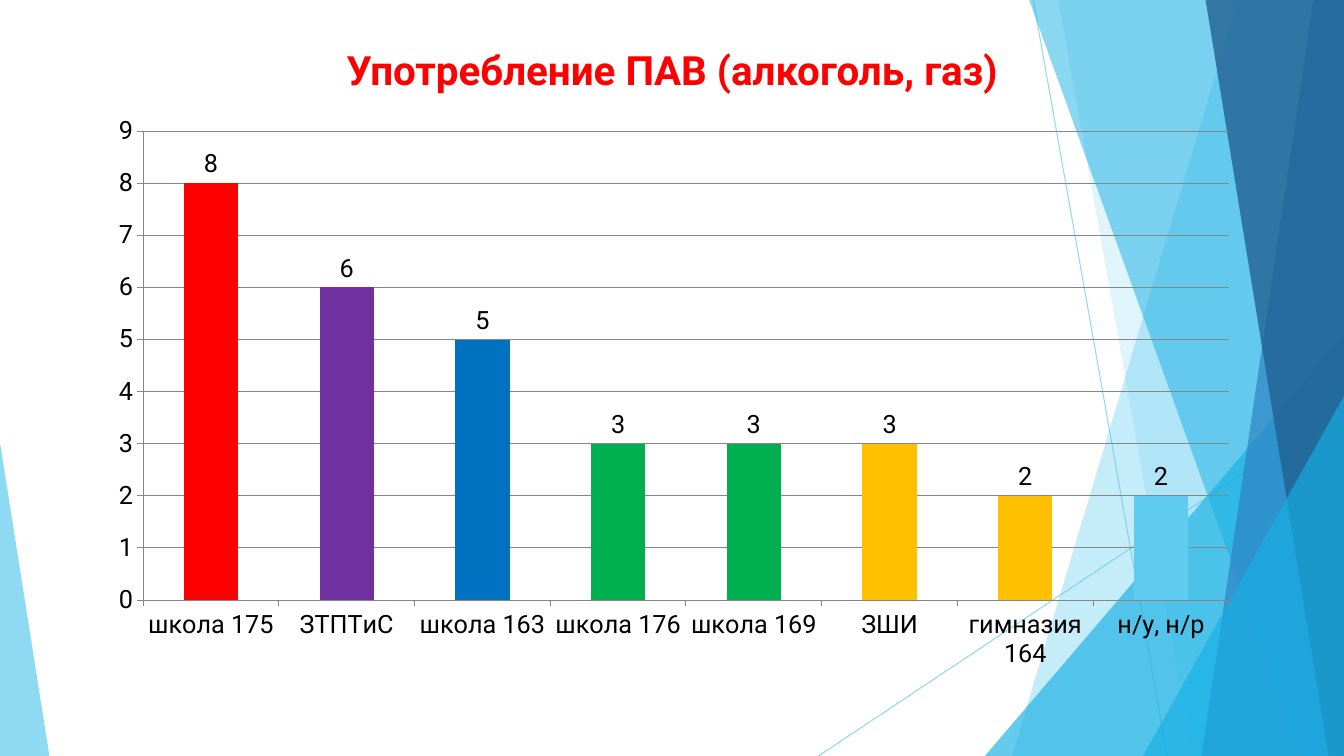
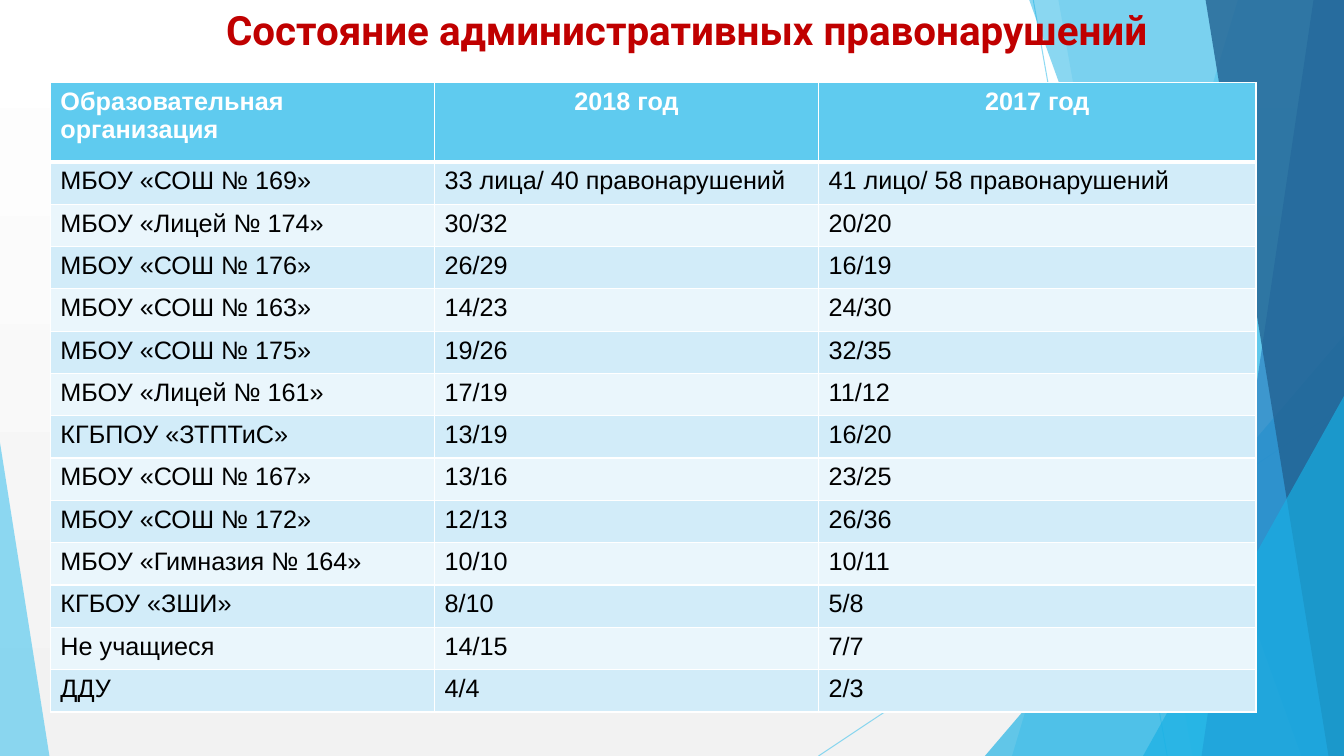
import pptx
import pptx.chart.data
import pptx.dml.color
import pptx.enum.chart
import pptx.enum.shapes
import pptx.enum.text
import pptx.oxml
import pptx.oxml.ns
import pptx.util
import lxml.etree

Pt = pptx.util.Pt
qn = pptx.oxml.ns.qn
ALIGN = pptx.enum.text.PP_ALIGN
W, H = pptx.util.Inches(13.33), pptx.util.Inches(7.5)

COLORS = {
    "white": "FFFFFF", "black": "000000", "mist": "F2F2F2", "grid": "868686",
    "sky": "5FCBEF", "cyan": "17B0E4", "blue": "2E83C3", "navy": "226292",
    "band_dark": "D2ECF9", "band_light": "EAF6FC",
    "red": "FF0000", "dark_red": "C00000", "purple": "7030A0",
    "azure": "0070C0", "green": "00B050", "amber": "FFC000",
}

# Backdrop geometry, in percent of the slide
RAYS = [((76.88, 0), (86.85, 100)), ((100, 53.73), (60.9, 100))]
# Panels reach the right edge: top x, bottom x, colour, opacity
# Triangles stand on the bottom edge: left, top, right, apex, colour, opacity
FACETS = [
    ("panel", 92.1, 75.3, "sky", 36),
    ("panel", 78.75, 88.73, "sky", 20),
    ("triangle", 73.28, 44.4, 100, 1, "cyan", 66),
    ("panel", 76.58, 96.83, "cyan", 50),
    ("panel", 97.73, 89.4, "blue", 70),
    ("panel", 89.7, 98.85, "navy", 80),
    ("triangle", 85.05, 52.4, 100, 1, "cyan", 66),
    ("triangle", 0, 58.53, 3.68, 0, "sky", 70),
]

BARS = [
    ("школа 175", 8, "red"), ("ЗТПТиС", 6, "purple"), ("школа 163", 5, "azure"),
    ("школа 176", 3, "green"), ("школа 169", 3, "green"), ("ЗШИ", 3, "amber"),
    ("гимназия 164", 2, "amber"), ("н/у, н/р", 2, "sky"),
]

OFFENCES = [
    ("Образовательная организация", "2018 год", "2017 год"),
    ("МБОУ «СОШ № 169»", "33 лица/ 40 правонарушений", "41 лицо/ 58 правонарушений"),
    ("МБОУ «Лицей № 174»", "30/32", "20/20"),
    ("МБОУ «СОШ № 176»", "26/29", "16/19"),
    ("МБОУ «СОШ № 163»", "14/23", "24/30"),
    ("МБОУ «СОШ № 175»", "19/26", "32/35"),
    ("МБОУ «Лицей № 161»", "17/19", "11/12"),
    ("КГБПОУ «ЗТПТиС»", "13/19", "16/20"),
    ("МБОУ «СОШ № 167»", "13/16", "23/25"),
    ("МБОУ «СОШ № 172»", "12/13", "26/36"),
    ("МБОУ «Гимназия № 164»", "10/10", "10/11"),
    ("КГБОУ «ЗШИ»", "8/10", "5/8"),
    ("Не учащиеся", "14/15", "7/7"),
    ("ДДУ", "4/4", "2/3"),
]


def rgb(name):
    return pptx.dml.color.RGBColor.from_string(COLORS[name])


def at(x, y):
    """Point on the slide from percentages."""
    return int(W * x / 100), int(H * y / 100)


def area(x, y, w, h):
    return at(x, y) + at(w, h)


def set_font(font, size, color, face, bold=False):
    font.size, font.name, font.bold = Pt(size), face, bold
    font.color.rgb = rgb(color)


def set_opacity(element, percent):
    clr = next(element.find(qn("p:spPr")).iter(qn("a:srgbClr")))
    lxml.etree.SubElement(clr, qn("a:alpha"), val=str(percent * 1000))


# Shared backdrop
def draw_ray(shapes, start, end):
    line = shapes.add_connector(pptx.enum.shapes.MSO_CONNECTOR.STRAIGHT, *at(*start), *at(*end))
    line.line.color.rgb = rgb("sky")
    line.line.width = Pt(0.75)
    set_opacity(line.element, 70)
    lxml.etree.SubElement(line.element.find(qn("p:spPr")), qn("a:effectLst"))
    return line


def draw_facet(shapes, kind, *geometry):
    *place, color, opacity = geometry
    if kind == "panel":
        top_x, bottom_x = place
        outline = shapes.build_freeform(*at(top_x, 0), scale=1.0)
        outline.add_line_segments([at(100, 0), at(100, 100), at(bottom_x, 100)], close=True)
        sp = outline.convert_to_shape()
    else:
        left, top, right, apex = place
        sp = shapes.add_shape(pptx.enum.shapes.MSO_SHAPE.ISOSCELES_TRIANGLE,
                              *area(left, top, right - left, 100 - top))
        sp.adjustments[0] = apex
    sp.shadow.inherit = False
    sp.fill.solid()
    sp.fill.fore_color.rgb = rgb(color)
    sp.line.fill.background()
    set_opacity(sp.element, opacity)
    return sp


def build_backdrop(layout, slide):
    """Draw the facets on a slide, then move them to its layout."""
    for ph in list(layout.placeholders):
        ph.element.getparent().remove(ph.element)
    parts = [draw_ray(slide.shapes, *ray) for ray in RAYS]
    parts += [draw_facet(slide.shapes, *facet) for facet in FACETS]
    for part in parts:
        layout.shapes.element.append(part.element)


def add_title(slide, box, text, color):
    tf = slide.shapes.add_textbox(*box).text_frame
    tf.word_wrap = True
    p = tf.paragraphs[0]
    p.alignment = ALIGN.CENTER
    r = p.add_run()
    r.text = text
    set_font(r.font, 28.8, color, "Roboto", True)


# Column chart
def add_bars(slide, box, bars):
    data = pptx.chart.data.CategoryChartData()
    data.categories = [name for name, _, _ in bars]
    data.add_series("Series 1", [value for _, value, _ in bars])
    chart = slide.shapes.add_chart(
        pptx.enum.chart.XL_CHART_TYPE.COLUMN_CLUSTERED, *box, data).chart
    chart.has_title = chart.has_legend = False
    set_font(chart.font, 18, "black", "Roboto")

    plot = chart.plots[0]
    plot.gap_width, plot.vary_by_categories = 150, False
    plot.has_data_labels = True
    plot.data_labels.show_value = True
    plot.data_labels.position = pptx.enum.chart.XL_LABEL_POSITION.OUTSIDE_END
    for i, (_, _, color) in enumerate(bars):
        fill = plot.series[0].points[i].format.fill
        fill.solid()
        fill.fore_color.rgb = rgb(color)

    value_axis = chart.value_axis
    value_axis.minimum_scale, value_axis.maximum_scale, value_axis.major_unit = 0, 9, 1
    value_axis.has_major_gridlines = True
    for axis in (chart.category_axis, value_axis):
        axis.major_tick_mark = pptx.enum.chart.XL_TICK_MARK.OUTSIDE
    for part in (chart.category_axis, value_axis, value_axis.major_gridlines):
        part.format.line.color.rgb = rgb("grid")
        part.format.line.width = Pt(0.75)


# Table
def set_borders(cell, widths):
    props = cell._tc.get_or_add_tcPr()
    for i, (side, width) in enumerate(widths.items()):
        ln = lxml.etree.Element(qn("a:ln" + side), w=str(Pt(width)))
        fill = lxml.etree.SubElement(ln, qn("a:solidFill"))
        lxml.etree.SubElement(fill, qn("a:srgbClr"), val=COLORS["white"])
        props.insert(i, ln)


def add_grid(slide, box, rows, col_shares, header_share):
    x, y, w, h = box
    table = slide.shapes.add_table(len(rows), len(col_shares), x, y, w, h).table
    for col, share in zip(table.columns, col_shares):
        col.width = int(w * share / 100)
    header_h = int(h * header_share / 100)
    for i, row in enumerate(rows):
        header = i == 0
        table.rows[i].height = header_h if header else (h - header_h) // (len(rows) - 1)
        band = "sky" if header else ("band_dark" if i % 2 else "band_light")
        for j, text in enumerate(row):
            cell = table.cell(i, j)
            cell.fill.solid()
            cell.fill.fore_color.rgb = rgb(band)
            set_borders(cell, {"L": 1, "R": 1, "T": 3 if i == 1 else 1, "B": 3 if header else 1})
            p = cell.text_frame.paragraphs[0]
            p.alignment = ALIGN.CENTER if header and j else ALIGN.LEFT
            r = p.add_run()
            r.text = text
            set_font(r.font, 18, "white" if header else "black", "Arial", header)


# Slides
def build_chart_slide(slide):
    slide.background.fill.solid()
    slide.background.fill.fore_color.rgb = rgb("white")
    add_title(slide, area(6.9, 5.33, 86.25, 7.73), "Употребление ПАВ (алкоголь, газ)", "red")
    add_bars(slide, area(7.13, 13.87, 86.03, 76.13), BARS)


def build_table_slide(slide):
    fill = slide.background.fill
    fill.gradient()
    fill.gradient_angle = 270
    for stop, color in zip(fill.gradient_stops, ("white", "mist")):
        stop.color.rgb = rgb(color)
    add_title(slide, area(8.33, 0, 85.58, 4.8),
              "Состояние административных правонарушений", "dark_red")
    add_grid(slide, area(3.75, 10.93, 89.7, 83.3), OFFENCES, (31.86, 31.86, 36.28), 12.6)


def main():
    prs = pptx.Presentation()
    prs.slide_width, prs.slide_height = W, H
    layout = prs.slide_layouts[6]
    chart_slide, table_slide = [prs.slides.add_slide(layout) for _ in range(2)]
    build_backdrop(layout, chart_slide)
    build_chart_slide(chart_slide)
    build_table_slide(table_slide)
    prs.save("out.pptx")


if __name__ == "__main__":
    main()
